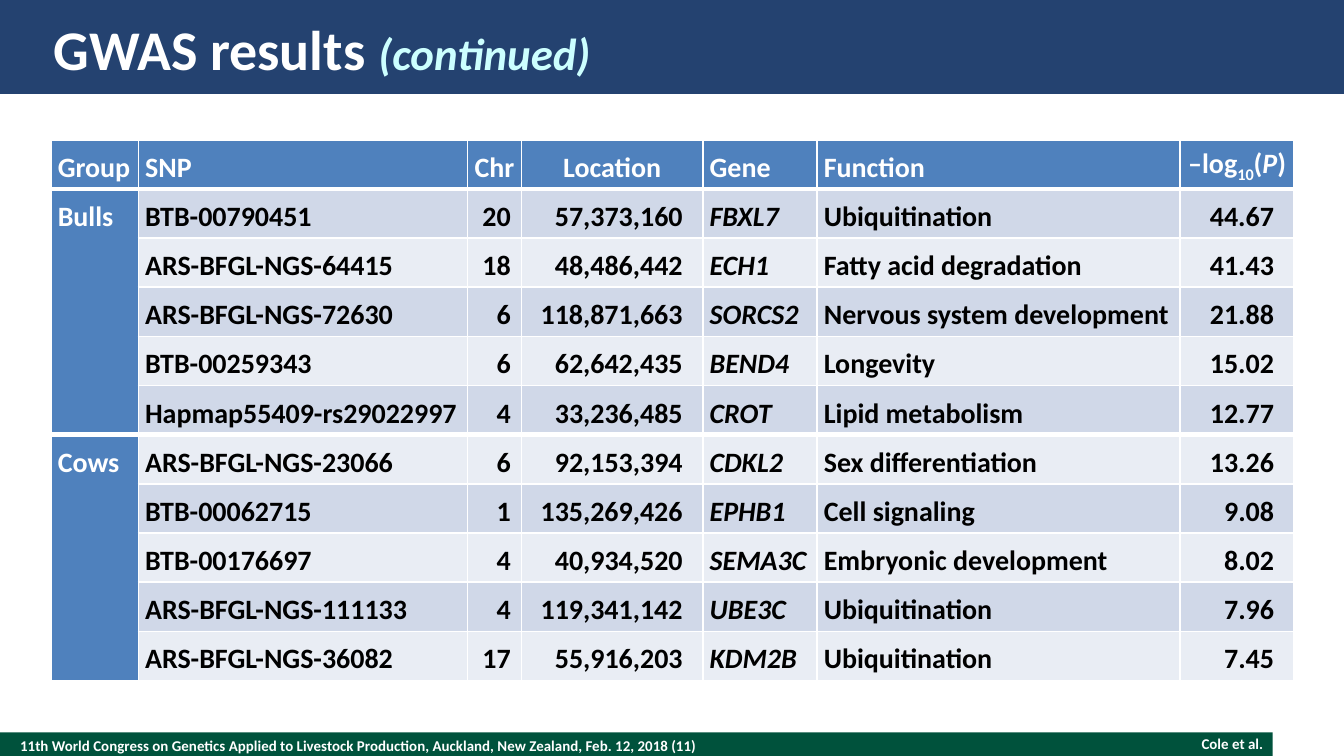
from typing import NamedTuple

from lxml import etree
from pptx import Presentation
from pptx import util as u
from pptx.dml.color import RGBColor
from pptx.enum import shapes, text
from pptx.oxml.ns import qn

FONT = "Calibri"
WHITE, BLACK, BLUE = "FFFFFF", "000000", "4F81BD"
BANDS = ("D0D8E8", "E9EDF4")
LEFT, MID, RIGHT = text.PP_ALIGN.LEFT, text.PP_ALIGN.CENTER, text.PP_ALIGN.RIGHT


class Box(NamedTuple):
    left: float
    top: float
    width: float
    height: float

    def lengths(self) -> list:
        return [u.Inches(n) for n in self]


class Column(NamedTuple):
    head: str
    width: float
    head_align: int = LEFT
    align: int = LEFT
    right_pad: float = 0.05
    italic: bool = False


class Snp(NamedTuple):
    name: str
    chrom: str
    place: str
    gene: str
    role: str
    score: str


COLUMNS = [
    Column("Group", 0.65),
    Column("SNP", 2.45),
    Column("Chr", 0.4, MID, RIGHT, 0.08),
    Column("Location", 1.35, MID, RIGHT, 0.15),
    Column("Gene", 0.85, italic=True),
    Column("Function", 2.7),
    Column("", 0.85, MID, RIGHT, 0.15),
]
GROUPS = {
    "Bulls": [
        Snp("BTB-00790451", "20", "57,373,160", "FBXL7", "Ubiquitination", "44.67"),
        Snp("ARS-BFGL-NGS-64415", "18", "48,486,442", "ECH1", "Fatty acid degradation", "41.43"),
        Snp("ARS-BFGL-NGS-72630", "6", "118,871,663", "SORCS2", "Nervous system development", "21.88"),
        Snp("BTB-00259343", "6", "62,642,435", "BEND4", "Longevity", "15.02"),
        Snp("Hapmap55409-rs29022997", "4", "33,236,485", "CROT", "Lipid metabolism", "12.77"),
    ],
    "Cows": [
        Snp("ARS-BFGL-NGS-23066", "6", "92,153,394", "CDKL2", "Sex differentiation", "13.26"),
        Snp("BTB-00062715", "1", "135,269,426", "EPHB1", "Cell signaling", "9.08"),
        Snp("BTB-00176697", "4", "40,934,520", "SEMA3C", "Embryonic development", "8.02"),
        Snp("ARS-BFGL-NGS-111133", "4", "119,341,142", "UBE3C", "Ubiquitination", "7.96"),
        Snp("ARS-BFGL-NGS-36082", "17", "55,916,203", "KDM2B", "Ubiquitination", "7.45"),
    ],
}
# Width of the rule below a row, where it is not 1 point
RULES = {0: 2.25, 5: 3}


def color(code: str) -> RGBColor:
    return RGBColor.from_string(code)


def style(run, size: float, code: str, italic: bool = False) -> None:
    font = run.font
    font.name, font.size, font.bold, font.italic = FONT, u.Pt(size), True, italic
    font.color.rgb = color(code)


def draw_bar(slide, box: Box, code: str) -> None:
    bar = slide.shapes.add_shape(shapes.MSO_SHAPE.RECTANGLE, *box.lengths())
    bar.shadow.inherit = False
    bar.fill.solid()
    bar.fill.fore_color.rgb = color(code)
    bar.line.fill.background()


def set_frame(frame) -> None:
    """Wrap the text, centre it vertically and drop the margins."""
    frame.word_wrap = True
    frame.vertical_anchor = text.MSO_ANCHOR.MIDDLE
    frame.margin_left = frame.margin_right = frame.margin_top = frame.margin_bottom = 0


def draw_note(slide, box: Box, words: str, align: int) -> None:
    frame = slide.shapes.add_textbox(*box.lengths()).text_frame
    set_frame(frame)
    frame.text = words
    line = frame.paragraphs[0]
    line.alignment = align
    style(line.runs[0], 8, WHITE)


def draw_title(slide) -> None:
    title = slide.shapes.title
    title.left, title.top, title.width, title.height = Box(0.4, 0.1, 9.2, 0.52).lengths()
    slide.shapes.element.append(title.element)  # in front of the bars
    frame = title.text_frame
    set_frame(frame)
    frame.auto_size = text.MSO_AUTO_SIZE.NONE
    frame.text = "GWAS results "
    line = frame.paragraphs[0]
    line.alignment = LEFT
    style(line.runs[0], 30, WHITE)
    more = line.add_run()
    more.text = "(continued)"
    style(more, 24, "CCFFFF", italic=True)


def set_edges(cell, above: float, below: float) -> None:
    """Add white borders; they must come before the fill in the XML."""
    props = cell._tc.get_or_add_tcPr()
    for spot, (side, width) in enumerate(zip("LRTB", (1, 1, above, below))):
        edge = etree.Element(qn(f"a:ln{side}"), w=str(u.Pt(width)))
        fill = etree.SubElement(edge, qn("a:solidFill"))
        etree.SubElement(fill, qn("a:srgbClr"), val=WHITE)
        props.insert(spot, edge)


def set_cell(cell, words: str, code: str, align: int = LEFT,
             pad: float = 0.05, italic: bool = False) -> None:
    cell.margin_left, cell.margin_right = u.Inches(0.05), u.Inches(pad)
    cell.margin_top = cell.margin_bottom = u.Inches(0.03)
    cell.text_frame.text = words
    line = cell.text_frame.paragraphs[0]
    line.alignment, line.line_spacing = align, u.Pt(22)
    for run in line.runs:
        style(run, 15, code, italic)


def add_score_head(cell) -> None:
    line = cell.text_frame.paragraphs[0]
    for words in ("–log", "10", "(", "P", ")"):
        run = line.add_run()
        run.text = words
        style(run, 15, WHITE, italic=words == "P")
        if words == "10":
            run._r.get_or_add_rPr().set("baseline", "-25000")


def draw_table(slide) -> None:
    rows = 1 + sum(len(snps) for snps in GROUPS.values())
    box = Box(0.38, 1.04, 9.25, 4.02)
    table = slide.shapes.add_table(rows, len(COLUMNS), *box.lengths()).table
    table.first_row = table.horz_banding = False

    for col, spec in enumerate(COLUMNS):
        table.columns[col].width = u.Inches(spec.width)
        set_cell(table.cell(0, col), spec.head, WHITE, spec.head_align)
    add_score_head(table.cell(0, len(COLUMNS) - 1))

    row = 1
    for group, snps in GROUPS.items():
        first = table.cell(row, 0)
        first.merge(table.cell(row + len(snps) - 1, 0))
        set_cell(first, group, WHITE)
        for snp in snps:
            for col, (spec, words) in enumerate(zip(COLUMNS[1:], snp), 1):
                set_cell(table.cell(row, col), words, BLACK,
                         spec.align, spec.right_pad, spec.italic)
            row += 1

    for row in range(rows):
        for col in range(len(COLUMNS)):
            cell = table.cell(row, col)
            cell.fill.solid()
            shade = BLUE if row == 0 or col == 0 else BANDS[(row - 1) % 2]
            cell.fill.fore_color.rgb = color(shade)
            set_edges(cell, RULES.get(row - 1, 1), RULES.get(row, 1))


def main() -> None:
    deck = Presentation()
    deck.slide_width, deck.slide_height = u.Inches(10), u.Inches(10 * 9 / 16)
    slide = deck.slides.add_slide(deck.slide_layouts[5])
    draw_bar(slide, Box(0, 5.45, 9.47, 0.2), "00523C")
    draw_bar(slide, Box(0, 0, 10, 0.7), "244270")
    draw_note(slide, Box(0.15, 5.45, 6.5, 0.2),
              "11th World Congress on Genetics Applied to Livestock Production, "
              "Auckland, New Zealand, Feb. 12, 2018 (11)", LEFT)
    draw_note(slide, Box(7.2, 5.47, 2.2, 0.13), "Cole et al.", RIGHT)
    draw_title(slide)
    draw_table(slide)
    deck.save("out.pptx")


if __name__ == "__main__":
    main()
